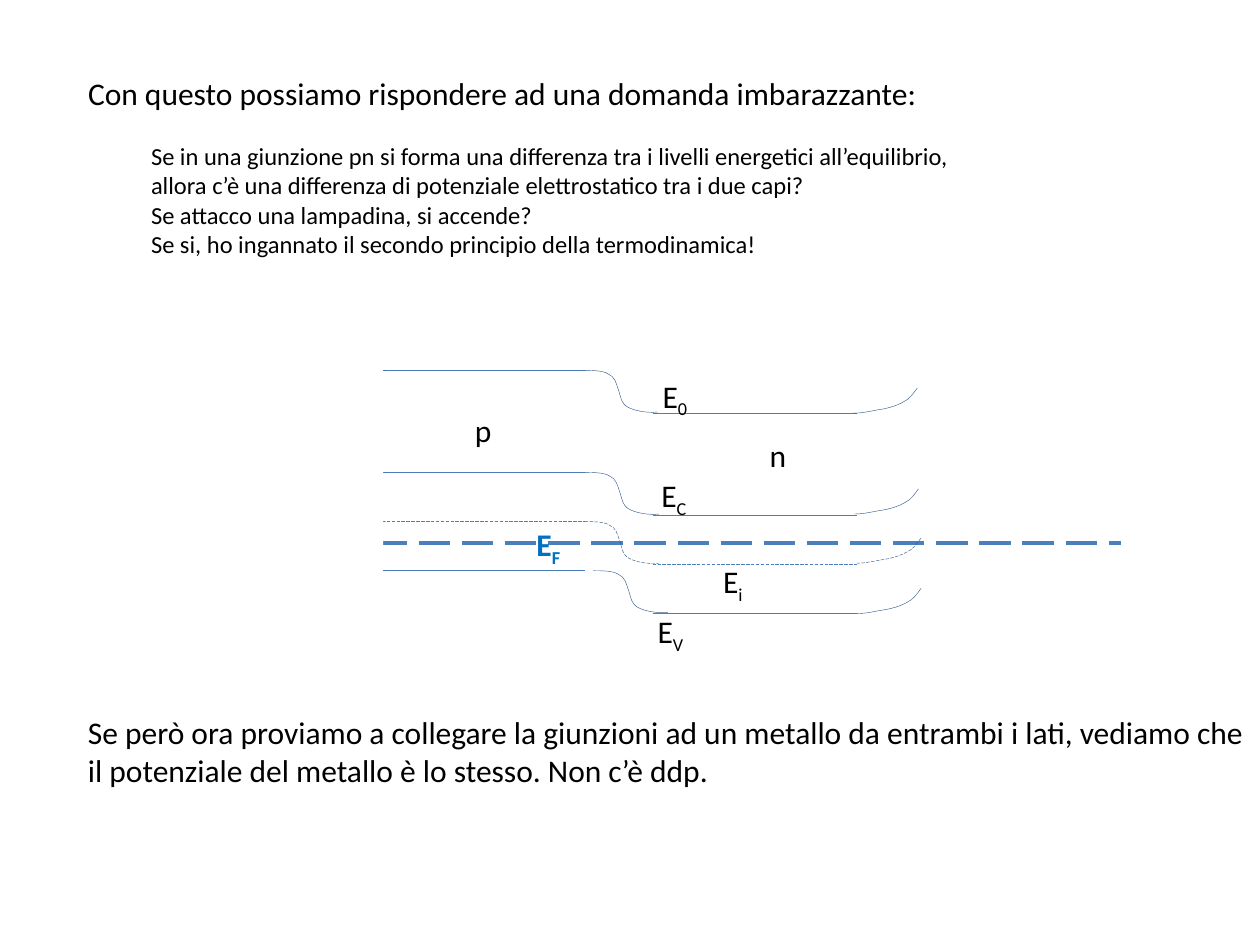
import pptx
import pptx.util
import pptx.dml.color
import pptx.enum.dml
import pptx.enum.shapes
import pptx.oxml
import pptx.oxml.ns

Inches, Pt = pptx.util.Inches, pptx.util.Pt
RGBColor = pptx.dml.color.RGBColor
LONG_DASH = pptx.enum.dml.MSO_LINE.LONG_DASH

BLACK = RGBColor(0x00, 0x00, 0x00)
WHITE = RGBColor(0xFF, 0xFF, 0xFF)
LEVEL_BLUE = RGBColor(0x4B, 0x7E, 0xBC)
BEND_BLUE = RGBColor(0x3A, 0x5F, 0x8C)
FERMI_BLUE = RGBColor(0x00, 0x70, 0xC0)

HEADING = "Con questo possiamo rispondere ad una domanda imbarazzante:"
QUESTIONS = [
    "Se in una giunzione pn si forma una differenza tra i livelli energetici all’equilibrio, "
    "allora c’è una differenza di potenziale elettrostatico tra i due capi?",
    "Se attacco una lampadina, si accende?",
    "Se si, ho ingannato il secondo principio della termodinamica!",
]
ANSWER = ("Se però ora proviamo a collegare la giunzioni ad un metallo da entrambi i lati, "
          "vediamo che il potenziale del metallo è lo stesso. Non c’è ddp.")

# letter, subscript, left, top, width, format
LABELS = [
    ("p", "", 3.67, 3.21, 0.34, {}),
    ("n", "", 6.01, 3.41, 0.34, {}),
    ("E", "0", 5.16, 2.94, 0.41, {}),
    ("E", "C", 5.15, 3.73, 0.41, {}),
    ("E", "V", 5.12, 4.81, 0.42, {}),
    ("E", "i", 5.64, 4.41, 0.36, {}),
    ("E", "F", 4.16, 4.12, 0.40, {"bold": True, "color": FERMI_BLUE}),
]

# level on the p side, left of the junction bend, left and foot of the right contact bend
SOLID_BANDS = [
    (2.94, 4.63, 6.77, 3.28),
    (3.75, 4.64, 6.78, 4.08),
    (4.53, 4.71, 6.80, 4.87),
]
INTRINSIC_BAND = (4.14, 4.64, 6.80, 4.47)
P_SIDE, N_SIDE = (3.03, 4.64), (5.18, 6.80)
BAND_DROP = 0.34
FERMI_LEVEL, FERMI_ENDS = 4.31, (0.93, 8.90)
LEFT_CONTACT = 2.54
COVER = (0.65, 2.35, 2.39, 2.66)

# cubic Bezier points: a start, then three for each segment
JUNCTION_BEND = [
    (0, 0), (0.07, 0), (0.16, 0), (0.20, 0.03), (0.25, 0.05), (0.26, 0.10), (0.28, 0.16),
    (0.30, 0.22), (0.30, 0.26), (0.35, 0.29), (0.40, 0.32), (0.51, 0.34), (0.59, 0.33),
]
LEFT_BEND = [
    (0, 0.15), (0.05, 0.11), (0.09, 0.07), (0.15, 0.05), (0.21, 0.03), (0.29, 0.02),
    (0.36, 0.01), (0.42, 0), (0.47, 0), (0.52, 0),
]
RIGHT_BEND = [
    (0.51, -0.20), (0.48, -0.16), (0.45, -0.11), (0.40, -0.09), (0.35, -0.06),
    (0.28, -0.04), (0.22, -0.03), (0.15, -0.02), (0.08, 0), (0, 0),
]


def format_line(line, color, width, dash):
    line.color.rgb = color
    for name, value in {"width": Pt(width), "dash_style": dash}.items():
        setattr(line, name, value)


def add_level(shapes, ends, y, width, dash=None):
    level = shapes.add_connector(
        pptx.enum.shapes.MSO_CONNECTOR.STRAIGHT,
        Inches(ends[0]), Inches(y), Inches(ends[1]), Inches(y))
    format_line(level.line, LEVEL_BLUE, width, dash)
    level._element.spPr.append(pptx.oxml.parse_xml(
        "<a:effectLst %s/>" % pptx.oxml.ns.nsdecls("a")))


def add_bend(shapes, controls, left, top, dash=None):
    """Draw the control points as straight steps, then join each three into one curve."""
    points = [(Inches(left + x), Inches(top + y)) for x, y in controls]
    builder = shapes.build_freeform(*points[0])
    builder.add_line_segments(points[1:], close=False)
    bend = builder.convert_to_shape()
    steps = bend._element.xpath(".//a:lnTo")
    for first in range(0, len(steps), 3):
        curve = steps[first]
        curve.tag = pptx.oxml.ns.qn("a:cubicBezTo")
        for step in steps[first + 1:first + 3]:
            curve.append(step[0])
            step.getparent().remove(step)
    bend.shadow.inherit = False
    bend.fill.background()
    format_line(bend.line, BEND_BLUE, 0.25, dash)


def add_band(shapes, band, width, dash=None):
    y, junction, contact, foot = band
    add_level(shapes, P_SIDE, y, width, dash)
    add_level(shapes, N_SIDE, y + BAND_DROP, width, dash)
    add_bend(shapes, JUNCTION_BEND, junction, y, dash)
    add_bend(shapes, LEFT_BEND, LEFT_CONTACT, y, dash)
    add_bend(shapes, RIGHT_BEND, contact, foot, dash)


def add_box(page, left, top, width, height, wrap=True):
    box = page.shapes.add_textbox(*map(Inches, (left, top, width, height)))
    box.text_frame.word_wrap = wrap
    return box.text_frame


def add_span(para, text, size=18, color=BLACK, bold=None):
    span = para.add_run()
    span.text = text
    for name, value in {"name": "Calibri", "size": Pt(size), "bold": bold}.items():
        setattr(span.font, name, value)
    span.font.color.rgb = color
    return span


def main():
    deck = pptx.Presentation()
    deck.slide_width, deck.slide_height = Inches(10), Inches(7.5)
    page = deck.slides.add_slide(deck.slide_layouts[6])

    frame = add_box(page, 0.6, 0.54, 7.49, 1.58)
    add_span(frame.paragraphs[0], HEADING)
    for index, question in enumerate(QUESTIONS):
        para = frame.add_paragraph()
        para.level = 1
        para.space_before = Pt(0 if index else 16.5)
        add_span(para, question, size=14)

    for band in SOLID_BANDS:
        add_band(page.shapes, band, 0.75)
    add_level(page.shapes, FERMI_ENDS, FERMI_LEVEL, 2.25, LONG_DASH)
    add_band(page.shapes.add_group_shape().shapes, INTRINSIC_BAND, 0.25, LONG_DASH)

    for letter, subscript, left, top, width, style in LABELS:
        para = add_box(page, left, top, width, 0.4, wrap=False).paragraphs[0]
        add_span(para, letter, **style)
        if subscript:
            span = add_span(para, subscript, **style)
            span.font._element.set("baseline", "-25000")

    add_span(add_box(page, 0.6, 5.61, 9.4, 0.71).paragraphs[0], ANSWER)

    cover = page.shapes.add_shape(
        pptx.enum.shapes.MSO_SHAPE.RECTANGLE, *map(Inches, COVER))
    cover.shadow.inherit = False
    cover.fill.solid()
    cover.fill.fore_color.rgb = WHITE
    cover.line.fill.background()
    deck.save("out.pptx")


if __name__ == "__main__":
    main()
